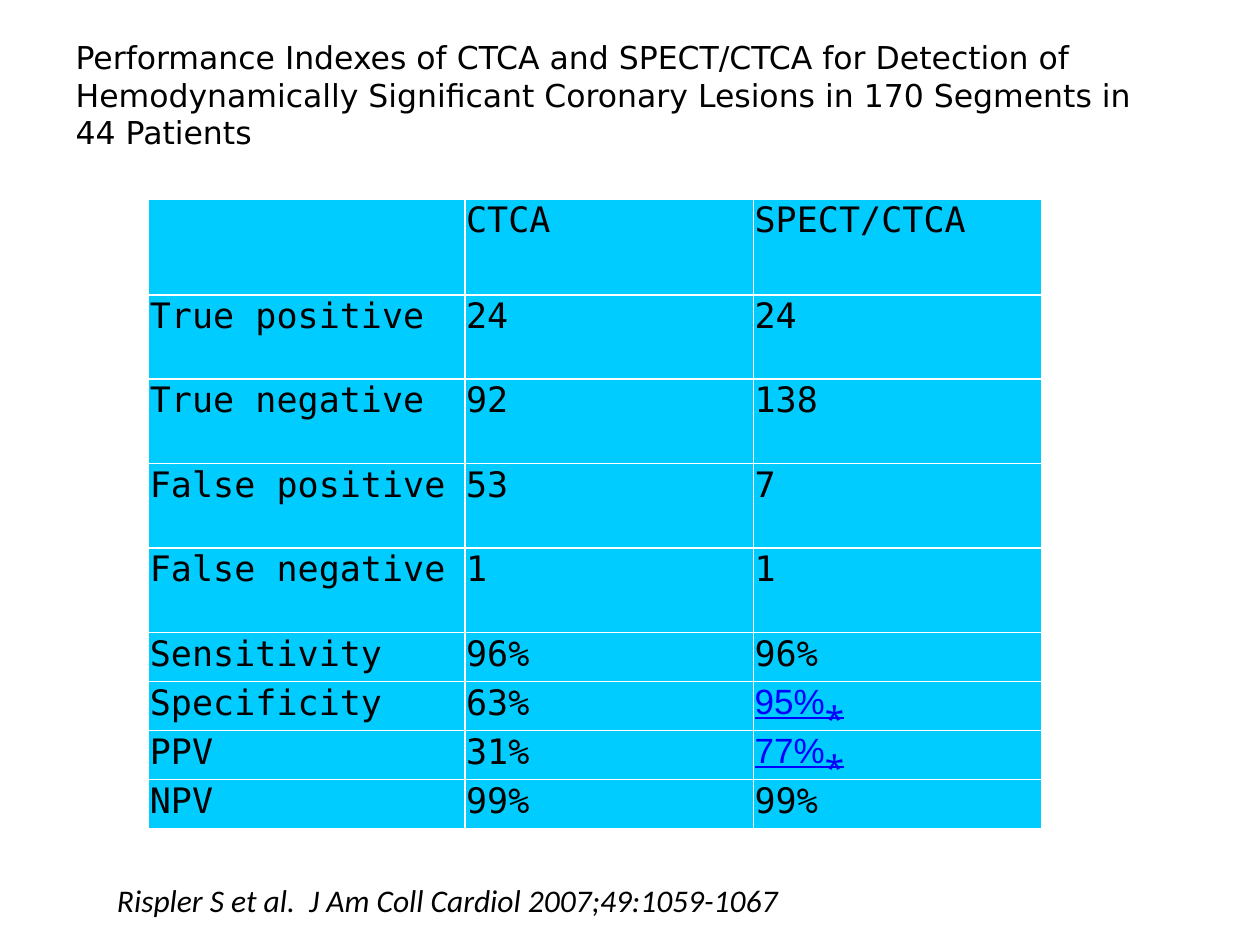
from lxml import etree
from pptx import Presentation
from pptx.dml.color import RGBColor
from pptx.enum.text import MSO_ANCHOR, MSO_AUTO_SIZE, PP_ALIGN
from pptx.oxml.ns import qn
from pptx.util import Inches, Pt

TOP = MSO_ANCHOR.TOP
LEFT = PP_ALIGN.LEFT
GROW = MSO_AUTO_SIZE.SHAPE_TO_FIT_TEXT

BLACK = RGBColor(0x00, 0x00, 0x00)
WHITE = RGBColor(0xFF, 0xFF, 0xFF)
CYAN = RGBColor(0x00, 0xCC, 0xFF)
BLUE = RGBColor(0x00, 0x00, 0xFF)

HEAD = {"name": "DejaVu Sans", "size": Pt(18)}
CITE = {"name": "Calibri", "size": Pt(18), "italic": True}
CELL = {"name": "DejaVu Sans Mono", "size": Pt(20)}
LINK = {"name": "Arial", "size": Pt(20), "underline": True}
INSETS = {
    "margin_left": Inches(0.01),
    "margin_right": Inches(0.01),
    "margin_top": Inches(0.01),
    "margin_bottom": 0,
}

TITLE = (
    "Performance Indexes of CTCA and SPECT/CTCA for Detection of "
    "Hemodynamically Significant Coronary Lesions in 170 Segments in 44 Patients"
)
SOURCE = "Rispler S et al.  J Am Coll Cardiol 2007;49:1059-1067"
ROWS = [
    ("", "CTCA", "SPECT/CTCA"),
    ("True positive", "24", "24"),
    ("True negative", "92", "138"),
    ("False positive", "53", "7"),
    ("False negative", "1", "1"),
    ("Sensitivity", "96%", "96%"),
    ("Specificity", "63%", "95%⁎"),
    ("PPV", "31%", "77%⁎"),
    ("NPV", "99%", "99%"),
]
WIDTHS = [2.51, 2.29, 2.29]
HEIGHTS = [0.76] + [0.67] * 4 + [0.39] * 4


def assign(item, values):
    for key, value in values.items():
        setattr(item, key, value)


def write(frame, text, style, color=BLACK):
    para = frame.paragraphs[0]
    para.alignment = LEFT
    run = para.add_run()
    run.text = text
    assign(run.font, style)
    run.font.color.rgb = color


def add_title(slide):
    title = slide.shapes.title
    assign(title, {
        "left": Inches(0.5), "top": Inches(0.25),
        "width": Inches(8.75), "height": Inches(1.01),
    })
    frame = title.text_frame
    assign(frame, {"word_wrap": True, "auto_size": GROW, "vertical_anchor": TOP})
    write(frame, TITLE, HEAD)


def add_source(slide):
    box = slide.shapes.add_textbox(
        Inches(0.83), Inches(6.94), Inches(5.51), Inches(0.4))
    assign(box.text_frame, {"word_wrap": False, "auto_size": GROW})
    write(box.text_frame, SOURCE, CITE)


def add_edges(cell):
    """Draw a thin white line on all four sides; call before filling."""
    props = cell._tc.get_or_add_tcPr()
    for side in ("lnL", "lnR", "lnT", "lnB"):
        line = etree.SubElement(props, qn(f"a:{side}"), w=str(Pt(1)))
        fill = etree.SubElement(line, qn("a:solidFill"))
        etree.SubElement(fill, qn("a:srgbClr"), val=str(WHITE))


def fill_cell(cell, text):
    assign(cell, INSETS)
    add_edges(cell)
    cell.fill.solid()
    cell.fill.fore_color.rgb = CYAN
    if text.endswith("⁎"):
        write(cell.text_frame, text, LINK, BLUE)
    elif text:
        write(cell.text_frame, text, CELL)


def add_grid(slide):
    table = slide.shapes.add_table(
        len(ROWS), len(WIDTHS), Inches(1.18), Inches(1.58),
        Inches(sum(WIDTHS)), Inches(sum(HEIGHTS))).table
    assign(table, {"first_row": False, "horz_banding": False})
    for col, width in zip(table.columns, WIDTHS):
        col.width = Inches(width)
    for row, height, texts in zip(table.rows, HEIGHTS, ROWS):
        row.height = Inches(height)
        for cell, text in zip(row.cells, texts):
            fill_cell(cell, text)


def main():
    deck = Presentation()
    deck.slide_width, deck.slide_height = Inches(10), Inches(7.5)
    slide = deck.slides.add_slide(deck.slide_layouts[5])
    add_grid(slide)
    add_title(slide)
    add_source(slide)
    deck.save("out.pptx")


if __name__ == "__main__":
    main()
